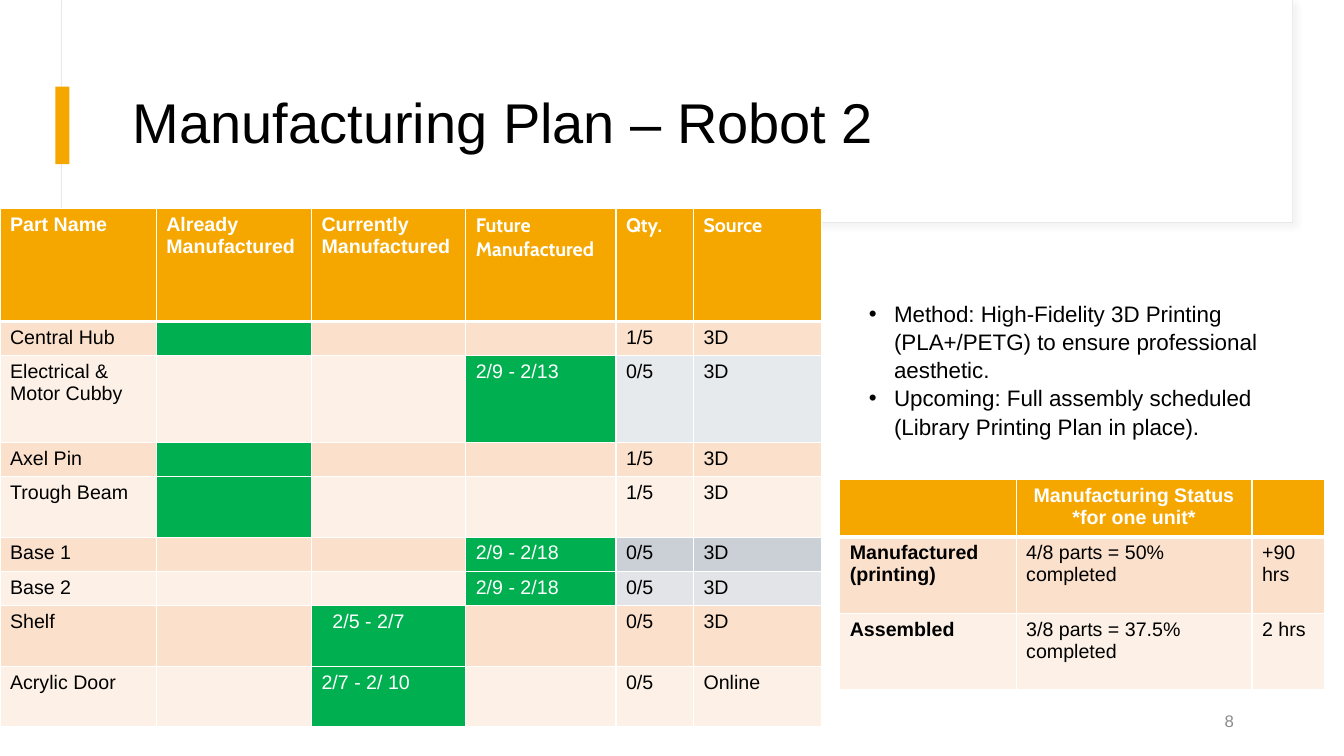
from lxml.etree import SubElement
from pptx import Presentation
from pptx.dml.color import RGBColor
from pptx.enum.shapes import MSO_SHAPE
from pptx.enum.text import MSO_ANCHOR, MSO_AUTO_SIZE, PP_ALIGN
from pptx.oxml import parse_xml
from pptx.oxml.ns import nsdecls, qn
from pptx.util import Pt

WHITE = RGBColor(0xFF, 0xFF, 0xFF)
BLACK = RGBColor(0x00, 0x00, 0x00)
ORANGE = RGBColor(0xF5, 0xA7, 0x00)
GREEN = RGBColor(0x00, 0xB0, 0x50)
PEACH = RGBColor(0xFB, 0xE1, 0xCC)
CREAM = RGBColor(0xFD, 0xF1, 0xE7)
MIST = RGBColor(0xE7, 0xEA, 0xED)
STEEL = RGBColor(0xCA, 0xD0, 0xD5)
SILVER = RGBColor(0xE2, 0xE4, 0xE7)
FRAME_GREY = RGBColor(0xE9, 0xE9, 0xE9)
NUMBER_GREY = RGBColor(0x8C, 0x8C, 0x8C)


def add_table(left, top, widths, heights):
    """Add a table with the given column widths and row heights in points."""
    frame = slide.shapes.add_table(
        len(heights), len(widths), Pt(left), Pt(top), Pt(sum(widths)), Pt(sum(heights)))
    table = frame.table
    table.horz_banding = False
    for column, width in zip(table.columns, widths):
        column.width = Pt(width)
    for row, height in zip(table.rows, heights):
        row.height = Pt(height)
    return table


def style_cell(table, row, column, text, fill, colour=BLACK, bold=False, font="Arial"):
    """Write one cell with its fill, text format and white borders."""
    cell = table.cell(row, column)
    cell.text = text
    cell.fill.solid()
    cell.fill.fore_color.rgb = fill
    for paragraph in cell.text_frame.paragraphs:
        paragraph.font.size = Pt(14)
        paragraph.font.name = font
        paragraph.font.bold = bold
        paragraph.font.color.rgb = colour
        if not text:
            SubElement(paragraph._p, qn("a:endParaRPr"), sz="1400")
    header_edge = {0: "lnB", 1: "lnT"}.get(row)
    for index, side in enumerate(("lnL", "lnR", "lnT", "lnB")):
        width = Pt(3 if side == header_edge else 1)
        cell._tc.get_or_add_tcPr().insert(index, parse_xml(
            f'<a:{side} {nsdecls("a")} w="{width}"><a:solidFill>'
            f'<a:srgbClr val="{WHITE}"/></a:solidFill></a:{side}>'))
    return cell


presentation = Presentation()
presentation.slide_width = Pt(960)
presentation.slide_height = Pt(540)
slide = presentation.slides.add_slide(presentation.slide_layouts[1])
title, body = slide.placeholders

# Title panel and accent bar
panels = []
for left, top, width, height, fill in (
    (43.9, 0, 879.1, 159.1, WHITE),
    (44.6, 0, 878.4, 158.4, WHITE),
    (39.6, 61.9, 10.1, 55.4, ORANGE),
):
    panel = slide.shapes.add_shape(
        MSO_SHAPE.RECTANGLE, Pt(left), Pt(top), Pt(width), Pt(height))
    panel.shadow.inherit = False
    panel.fill.solid()
    panel.fill.fore_color.rgb = fill
    panel.line.fill.background()
    panels.append(panel)
outline = panels[0]
outline.line.color.rgb = FRAME_GREY
outline.line.width = Pt(0.75)
effects = outline._element.spPr.find(qn("a:effectLst"))
effects.append(parse_xml(
    f'<a:outerShdw {nsdecls("a")} blurRad="{Pt(4)}" dist="{Pt(3)}" dir="2700000">'
    '<a:srgbClr val="D9D9D9"><a:alpha val="30000"/></a:srgbClr></a:outerShdw>'))

# Title, brought in front of the panel
slide.shapes._spTree.append(title._element)
title.left, title.top, title.width, title.height = Pt(87.8), Pt(43.2), Pt(800.6), Pt(92.9)
title.text_frame.text = "Manufacturing Plan – Robot 2"
title.text_frame.vertical_anchor = MSO_ANCHOR.MIDDLE
paragraph = title.text_frame.paragraphs[0]
paragraph.alignment = PP_ALIGN.LEFT
paragraph.line_spacing = 0.9
paragraph.font.size = Pt(40)
paragraph.font.name = "Arial"
paragraph.font.color.rgb = BLACK

# Parts table: name, schedule column, dates, quantity, source, fill of the last two
ALREADY, CURRENTLY, FUTURE = 1, 2, 3
headings = ("Part Name", "Already Manufactured", "Currently Manufactured",
            "Future Manufactured", "Qty.", "Source")
parts = (
    ("Central Hub", ALREADY, "", "1/5", "3D", PEACH),
    ("Electrical & Motor Cubby", FUTURE, "2/9 - 2/13", "0/5", "3D", MIST),
    ("Axel Pin", ALREADY, "", "1/5", "3D", PEACH),
    ("Trough Beam", ALREADY, "", "1/5", "3D", CREAM),
    ("Base 1", FUTURE, "2/9 - 2/18", "0/5", "3D", STEEL),
    ("Base 2", FUTURE, "2/9 - 2/18", "0/5", "3D", SILVER),
    ("Shelf", CURRENTLY, "2/5 - 2/7", "0/5", "3D", PEACH),
    ("Acrylic Door", CURRENTLY, "2/7 - 2/ 10", "0/5", "Online", CREAM),
)
parts_table = add_table(
    0, 149, (111.6, 110.9, 110.2, 107.3, 55.4, 91.4),
    (80.6, 24.5, 61.9, 24.5, 43.2, 24.5, 24.5, 43.2, 43.2))
for column, heading in enumerate(headings):
    font = "Cabin" if column >= FUTURE else "Arial"
    style_cell(parts_table, 0, column, heading, ORANGE, WHITE, True, font)
for row, (name, stage, dates, quantity, source, end_fill) in enumerate(parts, start=1):
    band = PEACH if row % 2 else CREAM
    style_cell(parts_table, row, 0, name, band)
    for column in (ALREADY, CURRENTLY, FUTURE):
        if column == stage:
            cell = style_cell(parts_table, row, column, dates, GREEN, WHITE)
            if name == "Shelf":
                cell.margin_left = Pt(15)
        else:
            style_cell(parts_table, row, column, "", band)
    style_cell(parts_table, row, 4, quantity, end_fill)
    style_cell(parts_table, row, 5, source, end_fill)

# Method notes
slide.shapes._spTree.append(body._element)
body.left, body.top, body.width, body.height = Pt(613.4), Pt(176.4), Pt(319), Pt(157.7)
notes = body.text_frame
notes.auto_size = MSO_AUTO_SIZE.NONE
notes.margin_top = Pt(37)
notes.text = ("Method: High-Fidelity 3D Printing (PLA+/PETG) to ensure professional aesthetic.\n"
              "Upcoming: Full assembly scheduled (Library Printing Plan in place).")
for paragraph in notes.paragraphs:
    properties = paragraph._p.get_or_add_pPr()
    properties.set("marL", str(Pt(18)))
    properties.set("indent", str(Pt(-18)))
    SubElement(properties, qn("a:buChar"), char="•")
    paragraph.space_before = Pt(0)
    paragraph.line_spacing = 1.05
    paragraph.font.size = Pt(16)
    paragraph.font.name = "Arial"
    paragraph.font.color.rgb = BLACK

# Slide number
number_box = slide.shapes.add_textbox(Pt(672.5), Pt(500.4), Pt(216), Pt(28.8))
number_box.text_frame.word_wrap = True
number_box.text_frame.vertical_anchor = MSO_ANCHOR.MIDDLE
number_box.text_frame.text = "8"
paragraph = number_box.text_frame.paragraphs[0]
paragraph.alignment = PP_ALIGN.RIGHT
paragraph.font.size = Pt(12)
paragraph.font.name = "Arial"
paragraph.font.color.rgb = NUMBER_GREY

# Status table
status_rows = (
    ("", "Manufacturing Status\n*for one unit*", ""),
    ("Manufactured (printing)", "4/8 parts = 50% completed", "+90 hrs"),
    ("Assembled", "3/8 parts = 37.5% completed", "2 hrs"),
)
status_table = add_table(599.8, 342.7, (126, 168.5, 51.8), (40, 54.7, 54.7))
for row, texts in enumerate(status_rows):
    for column, text in enumerate(texts):
        style_cell(status_table, row, column, text, (ORANGE, PEACH, CREAM)[row],
                   BLACK if row else WHITE, row == 0 or column == 0)
for paragraph in status_table.cell(0, 1).text_frame.paragraphs:
    paragraph.alignment = PP_ALIGN.CENTER

presentation.save("out.pptx")
